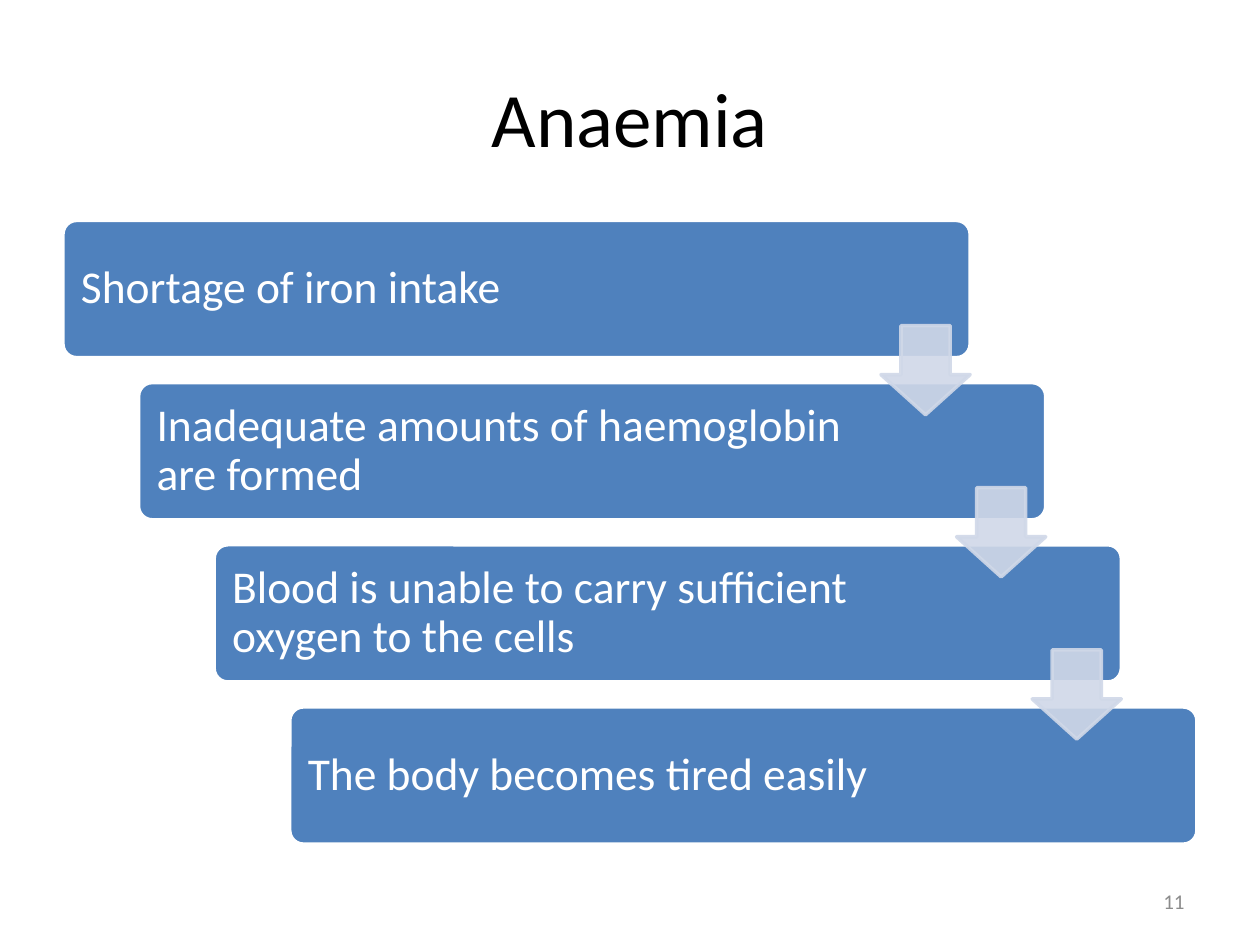
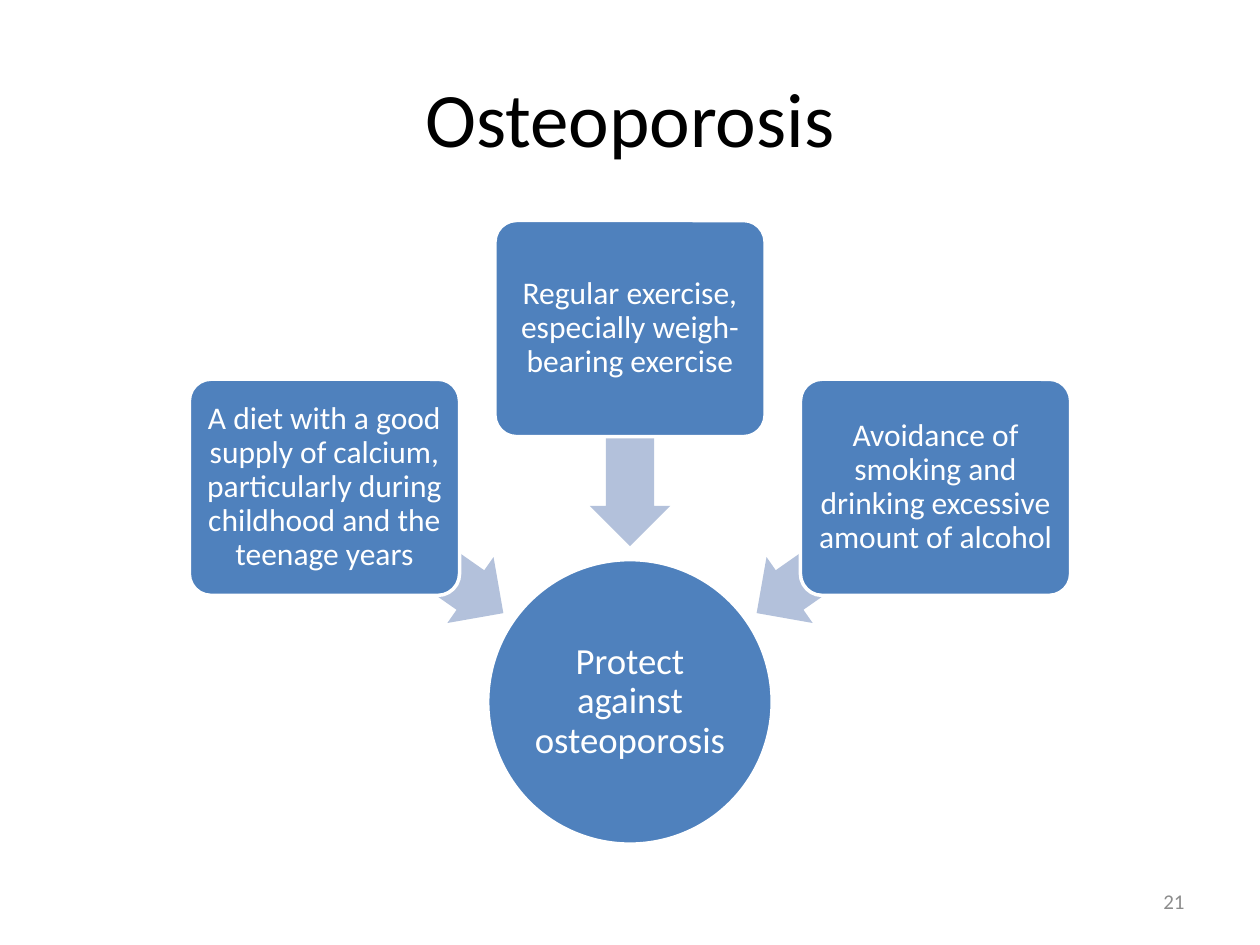
import pptx
import pptx.util
import pptx.dml.color
import pptx.enum.shapes
import pptx.enum.text
import pptx.oxml
import pptx.oxml.ns

Pt = pptx.util.Pt
RGBColor = pptx.dml.color.RGBColor
SHAPE = pptx.enum.shapes.MSO_SHAPE
ALIGN = pptx.enum.text.PP_ALIGN
MIDDLE = pptx.enum.text.MSO_ANCHOR.MIDDLE

# Shared look
FONT = "Calibri"
BLACK = RGBColor(0x00, 0x00, 0x00)
WHITE = RGBColor(0xFF, 0xFF, 0xFF)
BLUE = RGBColor(0x4F, 0x81, 0xBD)
PALE_ARROW = RGBColor(0xD0, 0xD8, 0xE8)
SOFT_ARROW = RGBColor(0xB3, 0xC1, 0xDB)
GREY = RGBColor(0x8C, 0x8C, 0x8C)

# Boxes: left, top, width, height in points
TITLE_BOX = (36, 21.6, 648, 90)
DIAGRAM_BOX = (36, 126, 648, 356.4)
NUMBER_BOX = (516.24, 500.4, 167.76, 28.8)


def set_values(target, values):
    for name, value in values.items():
        setattr(target, name, value)


def write_text(shape, text, size, color, align, spacing=1.0, margins=(7.2, 3.6, 7.2, 3.6)):
    frame = shape.text_frame
    sides = ("margin_left", "margin_top", "margin_right", "margin_bottom")
    set_values(frame, {side: Pt(margin) for side, margin in zip(sides, margins)})
    set_values(frame, {"word_wrap": True, "vertical_anchor": MIDDLE})
    para = frame.paragraphs[0]
    set_values(para, {"alignment": align, "line_spacing": spacing})
    span = para.add_run()
    span.text = text
    set_values(span.font, {"name": FONT, "size": Pt(size)})
    span.font.color.rgb = color


def add_figure(page, kind, box, fill, line=None, adjustments=()):
    figure = page.shapes.add_shape(kind, *map(Pt, box))
    figure.shadow.inherit = False
    figure.fill.solid()
    figure.fill.fore_color.rgb = fill
    if line is None:
        figure.line.fill.background()
    else:
        figure.line.color.rgb = line
        figure.line.width = Pt(2)
    for index, value in enumerate(adjustments):
        figure.adjustments[index] = value
    return figure


def set_opacity(figure, percent):
    """Apply one opacity to the fill and the outline."""
    for color in figure._element.spPr.iter(pptx.oxml.ns.qn("a:srgbClr")):
        alpha = pptx.oxml.parse_xml(
            f'<a:alpha {pptx.oxml.ns.nsdecls("a")} val="{percent * 1000}"/>')
        color.append(alpha)


def add_page(deck, title, number):
    """Title and page number, the same on every slide."""
    page = deck.slides.add_slide(deck.slide_layouts[5])
    heading = page.shapes.title
    places = ("left", "top", "width", "height")
    set_values(heading, dict(zip(places, map(Pt, TITLE_BOX))))
    write_text(heading, title, 44, BLACK, ALIGN.CENTER)
    number_box = page.shapes.add_textbox(*map(Pt, NUMBER_BOX))
    write_text(number_box, str(number), 12, GREY, ALIGN.RIGHT)
    return page


def add_staircase(page, box, steps):
    """Equal bars that step down to the right, joined by arrows."""
    left, top, width, height = box
    bar_width, bar_height = 0.8 * width, 0.22 * height
    step_x = (width - bar_width) / (len(steps) - 1)
    step_y = (height - bar_height) / (len(steps) - 1)
    arrow_size = 0.65 * bar_height

    # Bars
    for index, text in enumerate(steps):
        bar_box = (left + index * step_x, top + index * step_y, bar_width, bar_height)
        bar = add_figure(page, SHAPE.ROUNDED_RECTANGLE, bar_box, BLUE, WHITE, [0.1])
        right_margin = 95 if index == 0 else 102
        write_text(bar, text, 26, WHITE, ALIGN.LEFT, 0.9, (8, 8, right_margin, 8))

    # Arrows, centred on the gaps and flush with the upper bar's right end
    for index in range(len(steps) - 1):
        arrow_left = left + index * step_x + bar_width - arrow_size
        gap_middle = top + index * step_y + (step_y + bar_height) / 2
        arrow_box = (arrow_left, gap_middle - arrow_size / 2, arrow_size, arrow_size)
        arrow = add_figure(page, SHAPE.DOWN_ARROW, arrow_box, PALE_ARROW, PALE_ARROW)
        # The head is 45% of the length, the shaft 55% of the width
        arrow.adjustments[0], arrow.adjustments[1] = 0.55, 0.45
        set_opacity(arrow, 90)


def add_converging_cards(page, box, goal, causes):
    """Three cards whose arrows point at a circle below."""
    left, top, width, height = box
    middle = left + width / 2
    circle_size = 162.6
    card_width, card_height = 154.4, 123.5
    arrow_width, arrow_height = 124.6, 46
    card_step, card_drop = 174.6, 90.7
    arrow_step, arrow_y, arrow_drop = 123.4, 123.8, 64.8

    # Goal
    circle_box = (middle - circle_size / 2, top + height - circle_size,
                  circle_size, circle_size)
    circle = add_figure(page, SHAPE.OVAL, circle_box, BLUE, WHITE)
    write_text(circle, goal, 21, WHITE, ALIGN.CENTER, 0.9, (1, 1, 1, 1))

    # Each card covers the tail of its arrow; the outer two sit lower
    for side, text in zip((-1, 0, 1), causes):
        arrow_box = (middle + side * arrow_step - arrow_width / 2,
                     top + arrow_y + abs(side) * arrow_drop - arrow_height / 2,
                     arrow_width, arrow_height)
        arrow = add_figure(page, SHAPE.LEFT_ARROW, arrow_box, SOFT_ARROW,
                           adjustments=[0.6, 0.5])
        arrow.rotation = 270 + side * 55
        card_box = (middle + side * card_step - card_width / 2,
                    top + abs(side) * card_drop, card_width, card_height)
        card = add_figure(page, SHAPE.ROUNDED_RECTANGLE, card_box, BLUE, WHITE, [0.1])
        write_text(card, text, 18, WHITE, ALIGN.CENTER, 0.9, (3, 3, 3, 3))


def main():
    deck = pptx.Presentation()
    set_values(deck, {"slide_width": Pt(720), "slide_height": Pt(540)})

    anaemia = add_page(deck, "Anaemia", 11)
    add_staircase(anaemia, DIAGRAM_BOX, [
        "Shortage of iron intake",
        "Inadequate amounts of haemoglobin are formed",
        "Blood is unable to carry sufficient oxygen to the cells",
        "The body becomes tired easily",
    ])

    osteoporosis = add_page(deck, "Osteoporosis", 21)
    add_converging_cards(osteoporosis, DIAGRAM_BOX, "Protect against osteoporosis", [
        "A diet with a good supply of calcium, particularly during childhood "
        "and the teenage years",
        "Regular exercise, especially weigh-bearing exercise",
        "Avoidance of smoking and drinking excessive amount of alcohol",
    ])

    deck.save("out.pptx")


if __name__ == "__main__":
    main()
